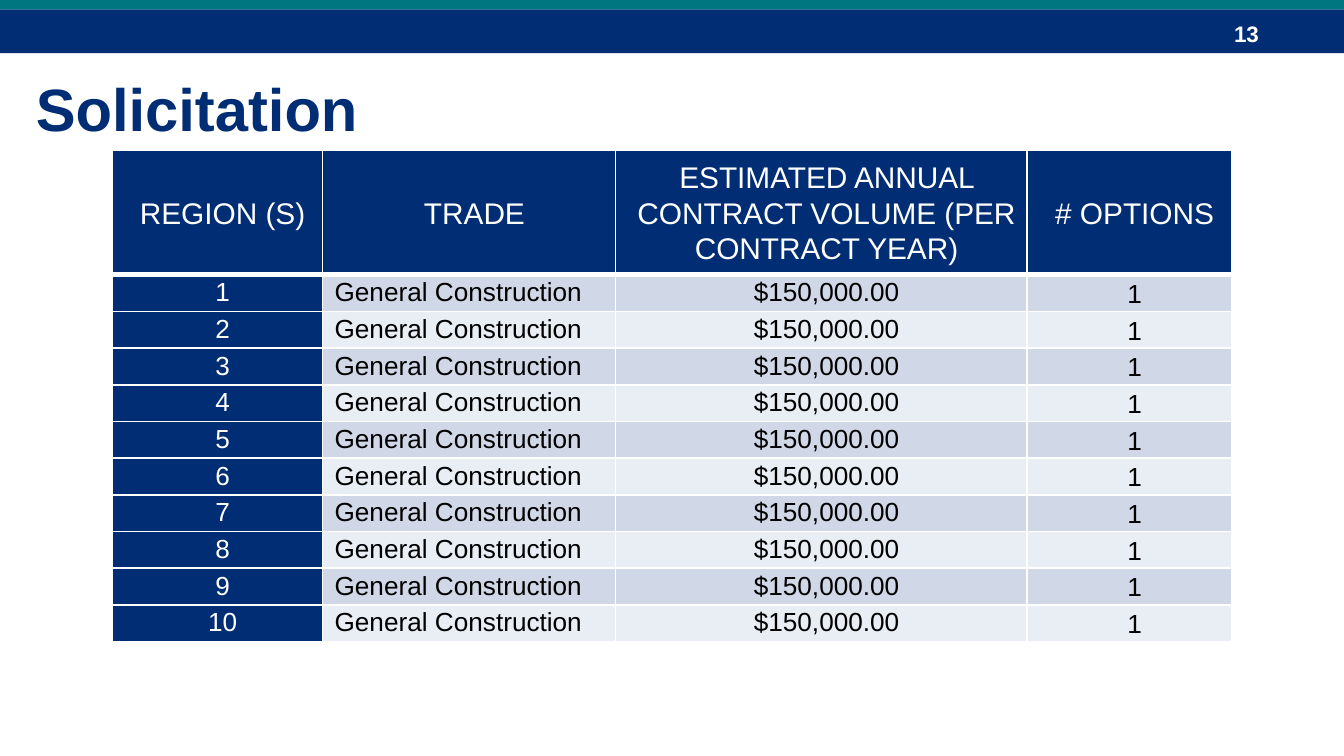
from dataclasses import dataclass

from lxml import etree
from pptx import Presentation
from pptx.dml.color import RGBColor
from pptx.enum.shapes import MSO_SHAPE
from pptx.enum.text import MSO_ANCHOR, MSO_AUTO_SIZE, PP_ALIGN
from pptx.oxml.ns import qn
from pptx.util import Pt

RECT = MSO_SHAPE.RECTANGLE
TOP, MIDDLE = MSO_ANCHOR.TOP, MSO_ANCHOR.MIDDLE
LEFT, CENTER = PP_ALIGN.LEFT, PP_ALIGN.CENTER
NO_FIT = MSO_AUTO_SIZE.NONE
TITLE_ONLY = 5


@dataclass(frozen=True)
class Theme:
    font: str = "Arial"
    navy: str = "002D73"
    teal: str = "007681"
    white: str = "FFFFFF"
    black: str = "000000"
    bands: tuple = ("D0D8E8", "E9EDF4")
    title: int = 32
    header: int = 16
    body: int = 14
    number: int = 12


def write(tf, text, *, font, size, color, bold=False, align=LEFT, spacing=None, indent=0):
    p = tf.paragraphs[0]
    p.alignment = align
    if spacing:
        p.line_spacing = spacing
    if indent:
        p._p.get_or_add_pPr().set("marL", str(Pt(indent)))
    r = p.add_run()
    r.text = text
    r.font.name, r.font.size, r.font.bold = font, Pt(size), bold
    r.font.color.rgb = RGBColor.from_string(color)


def set_borders(cell, color, **widths):
    """Draw the cell sides named lnL, lnR, lnT and lnB, with widths in points."""
    tcPr = cell._tc.get_or_add_tcPr()
    for i, (side, width) in enumerate(widths.items()):
        ln = etree.Element(qn(f"a:{side}"), w=str(Pt(width)))
        fill = etree.SubElement(ln, qn("a:solidFill"))
        etree.SubElement(fill, qn("a:srgbClr"), val=color)
        tcPr.insert(i, ln)


class SlideBuilder:
    def __init__(self, s, theme):
        self.s, self.theme = s, theme

    def bar(self, x, y, w, h, color):
        sp = self.s.shapes.add_shape(RECT, Pt(x), Pt(y), Pt(w), Pt(h))
        sp.shadow.inherit = False
        sp.fill.solid()
        sp.fill.fore_color.rgb = RGBColor.from_string(color)
        sp.line.fill.background()

    def place_text(self, sp, text, x, y, w, h, size, color):
        sp.left, sp.top, sp.width, sp.height = Pt(x), Pt(y), Pt(w), Pt(h)
        tf = sp.text_frame
        tf.word_wrap, tf.auto_size, tf.vertical_anchor = True, NO_FIT, MIDDLE
        write(tf, text, font=self.theme.font, size=size, color=color, bold=True)

    def title(self, text, x, y, w, h):
        self.place_text(self.s.shapes.title, text, x, y, w, h,
                        self.theme.title, self.theme.navy)

    def slide_number(self, text, x, y, w, h):
        sp = self.s.shapes.add_textbox(Pt(x), Pt(y), Pt(w), Pt(h))
        self.place_text(sp, text, x, y, w, h, self.theme.number, self.theme.white)

    def table(self, rows, x, y, widths, header_height, row_height):
        height = header_height + row_height * (len(rows) - 1)
        table = self.s.shapes.add_table(len(rows), len(widths), Pt(x), Pt(y),
                                        Pt(sum(widths)), Pt(height)).table
        table.first_col = True
        for column, width in zip(table.columns, widths):
            column.width = Pt(width)
        for i, values in enumerate(rows):
            table.rows[i].height = Pt(row_height if i else header_height)
            for j, text in enumerate(values):
                self.cell(table.cell(i, j), text, i, j, j == len(widths) - 1)

    def cell(self, cell, text, i, j, last):
        theme = self.theme
        is_header = i == 0
        is_label = is_header or j == 0
        cell.margin_left = cell.margin_right = Pt(0.7)
        cell.margin_top = cell.margin_bottom = Pt(0.7)
        cell.vertical_anchor = MIDDLE if is_header or last else TOP
        cell.fill.solid()
        cell.fill.fore_color.rgb = RGBColor.from_string(
            theme.navy if is_label else theme.bands[(i - 1) % 2])
        set_borders(cell, theme.white, lnL=1, lnR=1, lnT=1, lnB=3 if is_header else 1)
        write(cell.text_frame, text, font=theme.font,
              size=theme.header if is_header else theme.body,
              color=theme.white if is_label else theme.black,
              align=LEFT if j == 1 and not is_header else CENTER,
              spacing=1.07, indent=5.76)


def main():
    prs = Presentation()
    prs.slide_width, prs.slide_height = Pt(720), Pt(405)
    theme = Theme()
    s = prs.slides.add_slide(prs.slide_layouts[TITLE_ONLY])
    page = SlideBuilder(s, theme)

    page.bar(0, 5, 720, 23.5, theme.navy)
    page.slide_number("13", 654, 7.2, 54, 21.6)
    page.bar(0, -1.5, 720, 6.5, theme.teal)
    page.title("Solicitation", 12, 34.8, 684, 46)

    header = ("REGION (S)", "TRADE",
              "ESTIMATED ANNUAL CONTRACT VOLUME (PER CONTRACT YEAR)", "# OPTIONS")
    regions = [(str(n), "General Construction", "$150,000.00", "1") for n in range(1, 11)]
    page.table([header, *regions], 60, 80.7, (112.8, 157, 220.4, 109.6), 66.6, 19.65)

    prs.save("out.pptx")


if __name__ == "__main__":
    main()
